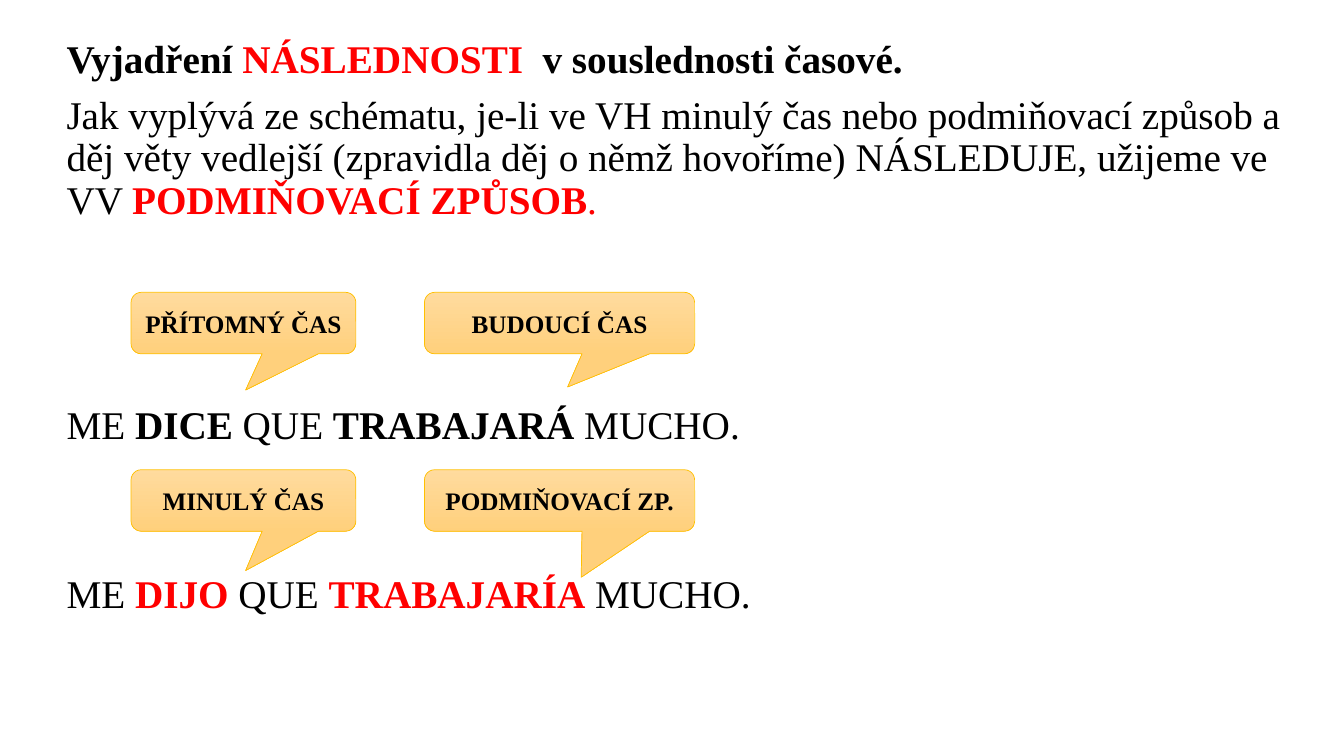
import pptx
import pptx.dml.color
import pptx.enum.shapes
import pptx.enum.text
import pptx.util
from pptx.util import Inches, Pt

FONT = "Times New Roman"
BLACK, RED = "000000", "FF0000"


def rgb(value):
    return pptx.dml.color.RGBColor.from_string(value)


deck = pptx.Presentation()
deck.slide_width, deck.slide_height = Inches(13.33), Inches(7.5)
slide = deck.slides.add_slide(deck.slide_layouts[1])
title = slide.shapes.title
title.element.getparent().remove(title.element)

body = slide.placeholders[1]
body.left, body.top = Inches(0.56), Inches(0.34)
body.width, body.height = Inches(12.3), Inches(6.69)
frame = body.text_frame
frame.word_wrap = True
frame.auto_size = pptx.enum.text.MSO_AUTO_SIZE.NONE
frame.vertical_anchor = pptx.enum.text.MSO_ANCHOR.TOP

# Space before in points, then runs of (text, bold, colour)
paragraphs = [
    (10, [("Vyjadření ", True, BLACK), ("NÁSLEDNOSTI", True, RED),
          ("  v souslednosti časové.", True, BLACK)]),
    (10, [("Jak vyplývá ze schématu, je-li ve VH minulý čas nebo podmiňovací "
           "způsob a děj věty vedlejší (zpravidla děj o němž hovoříme) "
           "NÁSLEDUJE, užijeme ve VV ", False, BLACK),
          ("PODMIŇOVACÍ ZPŮSOB", True, RED), (".", False, RED)]),
    (131, [("ME ", False, BLACK), ("DICE", True, BLACK), (" QUE ", False, BLACK),
           ("TRABAJARÁ", True, BLACK), (" MUCHO.", False, BLACK)]),
    (90, [("ME ", False, BLACK), ("DIJO", True, RED), (" QUE ", False, BLACK),
          ("TRABAJARÍA", True, RED), (" MUCHO.", False, BLACK)]),
]
for index, (space, spans) in enumerate(paragraphs):
    para = frame.add_paragraph() if index else frame.paragraphs[0]
    para.space_before, para.space_after = Pt(space), Pt(0)
    para.line_spacing = 0.9
    para.font.name, para.font.size = FONT, Pt(28)
    properties = para._p.get_or_add_pPr()
    properties.set("marL", "0")
    properties.set("indent", "0")
    bullet = pptx.oxml.parse_xml(
        '<a:buNone xmlns:a="http://schemas.openxmlformats.org/drawingml/2006/main"/>')
    properties.find(pptx.oxml.ns.qn("a:defRPr")).addprevious(bullet)
    for text, bold, colour in spans:
        span = para.add_run()
        span.text = text
        span.font.name, span.font.size = FONT, Pt(28)
        span.font.bold = bold
        span.font.color.rgb = rgb(colour)

columns = [(1.3, 2.23), (4.21, 2.68)]
# Row top, then (label, pointer x, pointer y) for each column
rows = [
    (2.9, [("PŘÍTOMNÝ ČAS", 0.01, 1.09), ("BUDOUCÍ ČAS", 0.03, 1.04)]),
    (4.66, [("MINULÝ ČAS", 0.01, 1.14), ("PODMIŇOVACÍ ZP.", 0.08, 1.25)]),
]
for top, callouts in rows:
    for (left, width), (label, pointer_x, pointer_y) in zip(columns, callouts):
        callout = slide.shapes.add_shape(
            pptx.enum.shapes.MSO_SHAPE.ROUNDED_RECTANGULAR_CALLOUT,
            Inches(left), Inches(top), Inches(width), Inches(0.61))
        callout.adjustments[0] = pointer_x
        callout.adjustments[1] = pointer_y
        callout.shadow.inherit = False
        callout.fill.gradient()
        callout.fill.gradient_angle = 270
        for stop, colour, position in zip(
                callout.fill.gradient_stops, ("FFDB9E", "FFD07C"), (0, 1)):
            stop.color.rgb = rgb(colour)
            stop.position = position
        callout.line.color.rgb = rgb("FFC000")
        callout.line.width = Pt(0.5)
        callout.text_frame.word_wrap = True
        callout.text_frame.vertical_anchor = pptx.enum.text.MSO_ANCHOR.MIDDLE
        para = callout.text_frame.paragraphs[0]
        para.alignment = pptx.enum.text.PP_ALIGN.CENTER
        span = para.add_run()
        span.text = label
        span.font.name, span.font.size = FONT, Pt(18)
        span.font.bold = True
        span.font.color.rgb = rgb(BLACK)

deck.save("out.pptx")
